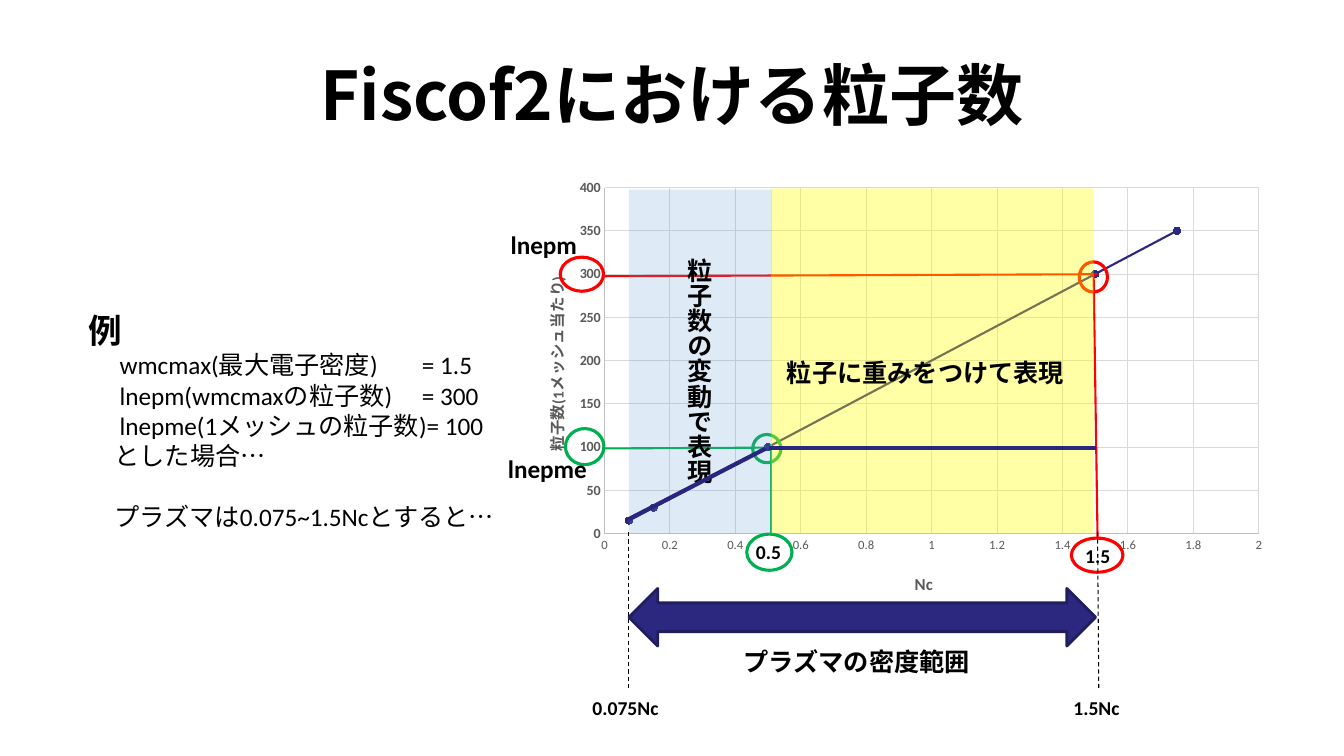
from dataclasses import dataclass
from typing import Optional, Union

from pptx import Presentation
from pptx.chart.data import XyChartData
from pptx.dml.color import RGBColor
from pptx.enum import chart as charts, dml, shapes, text
from pptx.oxml import parse_xml
from pptx.oxml.ns import nsdecls, qn
from pptx.util import Cm, Pt

NAVY, RED, GREEN, BLACK, GREY = "2D287F", "FF0000", "00B050", "000000", "595959"
LATIN, JAPANESE = "Calibri", "Noto Sans CJK JP"
OVAL = shapes.MSO_SHAPE.OVAL
RECTANGLE = shapes.MSO_SHAPE.RECTANGLE
DOUBLE_ARROW = shapes.MSO_SHAPE.LEFT_RIGHT_ARROW
Box = tuple[float, float, float, float]


@dataclass
class Figure:
    kind: shapes.MSO_SHAPE
    box: Box
    line: Optional[str] = None
    width: float = 2.25
    fill: Optional[str] = None
    opacity: int = 100


@dataclass
class Label:
    words: str
    box: Box
    size: int = 18
    vertical: bool = False


@dataclass
class Segment:
    ends: Box
    colour: str
    width: float = 1.5
    dashed: bool = False


@dataclass
class ExampleLine:
    words: str
    indent: float = 0.65
    size: int = 18
    bold: bool = False
    before: int = 0


EXAMPLE = [
    ExampleLine("例", indent=0, size=24, bold=True),
    ExampleLine("wmcmax(最大電子密度)\t= 1.5", indent=0.78),
    ExampleLine("lnepm(wmcmaxの粒子数)\t= 300", indent=0.78),
    ExampleLine("lnepme(1メッシュの粒子数)= 100", indent=0.78),
    ExampleLine("とした場合…"),
    ExampleLine("プラズマは0.075~1.5Ncとすると…", before=22),
]

# Back to front, in centimetres
DRAWING: list[Union[Figure, Label, Segment]] = [
    Figure(OVAL, (14.12, 6.48, 1.09, 0.86), RED),
    Figure(OVAL, (27, 13.56, 1.3, 0.86), RED),
    Label("1.5", (27.1, 13.59, 1.4, 0.86), 14),
    Segment((15.24, 6.96, 27.66, 6.91), RED),
    Segment((27.56, 6.91, 27.66, 13.59), RED),
    Figure(OVAL, (14.25, 10.8, 0.97, 0.91), GREEN),
    Figure(OVAL, (18.82, 13.46, 1.14, 0.91), GREEN),
    Label("0.5", (18.8, 13.49, 1.4, 0.86), 14),
    Segment((15.19, 11.3, 19.3, 11.28), GREEN),
    Segment((19.43, 11.2, 19.43, 13.46), GREEN),
    Figure(OVAL, (18.97, 10.95, 0.71, 0.71), GREEN),
    Figure(OVAL, (27.2, 6.6, 0.71, 0.76), RED),
    Figure(RECTANGLE, (19.43, 4.75, 8.13, 8.69), fill="FFFF00", opacity=35),
    Label("粒子に重みをつけて表現", (19.58, 8.89, 7.75, 1.02)),
    Label("lnepme", (12.55, 11.3, 5.13, 1.02)),
    Label("lnepm", (12.62, 5.66, 5.13, 1.02)),
    Figure(RECTANGLE, (15.85, 4.78, 3.61, 8.66), fill="5B9BD5", opacity=20),
    Label("粒子数の変動で表現", (16.87, 6.25, 1.27, 8.1), vertical=True),
    Figure(DOUBLE_ARROW, (15.85, 14.83, 11.76, 1.45), "211E5E", 2, NAVY),
    Segment((15.85, 13.41, 15.85, 17.35), BLACK, 0.75, dashed=True),
    Segment((27.66, 13.41, 27.69, 17.35), BLACK, 0.75, dashed=True),
    Label("プラズマの密度範囲", (18.49, 16.15, 6.48, 1.02)),
    Label("0.075Nc", (14.68, 17.4, 3.02, 0.86), 14),
    Label("1.5Nc", (26.8, 17.4, 3.02, 0.86), 14),
    Segment((15.85, 13.08, 19.3, 11.3), "2A257E", 3),
    Segment((19.38, 11.28, 27.61, 11.28), "2A257E", 3),
]


def rgb(colour: str) -> RGBColor:
    return RGBColor.from_string(colour)


def set_font(font, size: float, colour: str, bold: bool, name: str = LATIN) -> None:
    font.size, font.bold, font.name = Pt(size), bold, name
    font.color.rgb = rgb(colour)


def add_run(paragraph, words: str, size: float, bold: bool = True,
            colour: str = BLACK, name: str = LATIN) -> None:
    run = paragraph.add_run()
    run.text = words
    set_font(run.font, size, colour, bold, name)
    latin = run.font._element.find(qn("a:latin"))
    latin.addnext(parse_xml(f'<a:ea {nsdecls("a")} typeface="{JAPANESE}"/>'))


def place(shape, box: Box) -> None:
    shape.left, shape.top, shape.width, shape.height = map(Cm, box)


def fill_example(body) -> None:
    place(body, (1.98, 7.67, 11.91, 5.89))
    frame = body.text_frame
    frame.auto_size = text.MSO_AUTO_SIZE.NONE
    for index, line in enumerate(EXAMPLE):
        paragraph = frame.add_paragraph() if index else frame.paragraphs[0]
        paragraph.line_spacing = 1.0
        paragraph.space_before = Pt(line.before)
        properties = paragraph._p.get_or_add_pPr()
        properties.set("marL", str(Cm(line.indent)))
        properties.set("indent", "0")
        properties.append(parse_xml(f'<a:buNone {nsdecls("a")}/>'))
        if "\t" in line.words:
            properties.append(parse_xml(
                f'<a:tabLst {nsdecls("a")}><a:tab pos="{Cm(8.45)}" algn="l"/></a:tabLst>'))
        add_run(paragraph, line.words, line.size, line.bold)


def format_axis(axis, title: str, title_size: int, corner: tuple[float, float],
                maximum: float, step: float, size: int, bold: bool) -> None:
    """Format a value axis; corner is the title's place as a share of the chart."""
    axis.minimum_scale, axis.maximum_scale, axis.major_unit = 0, maximum, step
    axis.major_tick_mark = axis.minor_tick_mark = charts.XL_TICK_MARK.NONE
    axis.has_major_gridlines = True
    for line, colour in ((axis.format.line, "BFBFBF"),
                         (axis.major_gridlines.format.line, "D9D9D9")):
        line.color.rgb, line.width = rgb(colour), Pt(0.75)
    set_font(axis.tick_labels.font, size, GREY, bold)
    paragraph = axis.axis_title.text_frame.paragraphs[0]
    add_run(paragraph, title, title_size, colour=GREY)
    element = axis.axis_title._element
    for layout in element.findall(qn("c:layout")):
        element.remove(layout)
    element.find(qn("c:tx")).addnext(parse_xml(
        f'<c:layout {nsdecls("c")}><c:manualLayout><c:xMode val="edge"/><c:yMode val="edge"/>'
        f'<c:x val="{corner[0]}"/><c:y val="{corner[1]}"/></c:manualLayout></c:layout>'))


def add_particle_chart(slide) -> None:
    data = XyChartData()
    points = data.add_series("Series 1")
    for density, particles in ((0.075, 15), (0.15, 30), (0.5, 100), (1.5, 300), (1.75, 350)):
        points.add_data_point(density, particles)
    box = map(Cm, (13.18, 4.34, 19.02, 10.77))
    chart = slide.shapes.add_chart(charts.XL_CHART_TYPE.XY_SCATTER_LINES, *box, data).chart
    chart.has_title = chart.has_legend = False
    set_font(chart.font, 10, BLACK, False)
    chart.plots[0].vary_by_categories = False
    format_axis(chart.category_axis, "Nc", 12, (0.515, 0.93), 2, 0.2, 9, False)
    format_axis(chart.value_axis, "粒子数(1メッシュ当たり)", 11, (0.024, 0.237), 400, 50, 10, True)
    series = chart.plots[0].series[0]
    series.smooth = False
    series.format.line.color.rgb, series.format.line.width = rgb(NAVY), Pt(1.5)
    series.marker.style, series.marker.size = charts.XL_MARKER_STYLE.CIRCLE, 5
    series.marker.format.fill.solid()
    series.marker.format.fill.fore_color.rgb = rgb(NAVY)
    series.marker.format.line.color.rgb = rgb(NAVY)
    plot_area = chart._chartSpace.chart.plotArea
    for layout in plot_area.findall(qn("c:layout")):
        plot_area.remove(layout)
    plot_area.insert(0, parse_xml(
        f'<c:layout {nsdecls("c")}><c:manualLayout><c:layoutTarget val="inner"/>'
        '<c:xMode val="edge"/><c:yMode val="edge"/><c:x val="0.108"/><c:y val="0.036"/>'
        '<c:w val="0.867"/><c:h val="0.81"/></c:manualLayout></c:layout>'))


def add_figure(slide, figure: Figure) -> None:
    shape = slide.shapes.add_shape(figure.kind, *map(Cm, figure.box))
    shape.shadow.inherit = False
    if figure.fill:
        shape.fill.solid()
        shape.fill.fore_color.rgb = rgb(figure.fill)
        colour = shape._element.spPr.find(qn("a:solidFill"))[0]
        if figure.opacity < 100:
            colour.append(parse_xml(f'<a:alpha {nsdecls("a")} val="{figure.opacity * 1000}"/>'))
    else:
        shape.fill.background()
    if figure.line:
        shape.line.color.rgb, shape.line.width = rgb(figure.line), Pt(figure.width)
    else:
        shape.line.fill.background()


def add_label(slide, label: Label) -> None:
    frame = slide.shapes.add_textbox(*map(Cm, label.box)).text_frame
    frame.word_wrap = True
    frame.auto_size = text.MSO_AUTO_SIZE.SHAPE_TO_FIT_TEXT
    if label.vertical:
        frame._txBody.bodyPr.set("vert", "eaVert")
    add_run(frame.paragraphs[0], label.words, label.size)


def add_segment(slide, segment: Segment) -> None:
    connector = slide.shapes.add_connector(shapes.MSO_CONNECTOR.STRAIGHT, *map(Cm, segment.ends))
    connector.line.color.rgb, connector.line.width = rgb(segment.colour), Pt(segment.width)
    if segment.dashed:
        connector.line.dash_style = dml.MSO_LINE.DASH
    connector._element.spPr.append(parse_xml(f'<a:effectLst {nsdecls("a")}/>'))


def main() -> None:
    presentation = Presentation()
    presentation.slide_width, presentation.slide_height = Cm(33.87), Cm(19.05)
    slide = presentation.slides.add_slide(presentation.slide_layouts[1])
    title, body = slide.placeholders
    place(title, (1.7, 0.76, 30.48, 3.18))
    title.text_frame.vertical_anchor = text.MSO_ANCHOR.MIDDLE
    heading = title.text_frame.paragraphs[0]
    heading.alignment = text.PP_ALIGN.CENTER
    add_run(heading, "Fiscof2における粒子数", 48, name=JAPANESE)
    fill_example(body)
    add_particle_chart(slide)
    draw = {Figure: add_figure, Label: add_label, Segment: add_segment}
    for item in DRAWING:
        draw[type(item)](slide, item)
    presentation.save("out.pptx")


if __name__ == "__main__":
    main()
